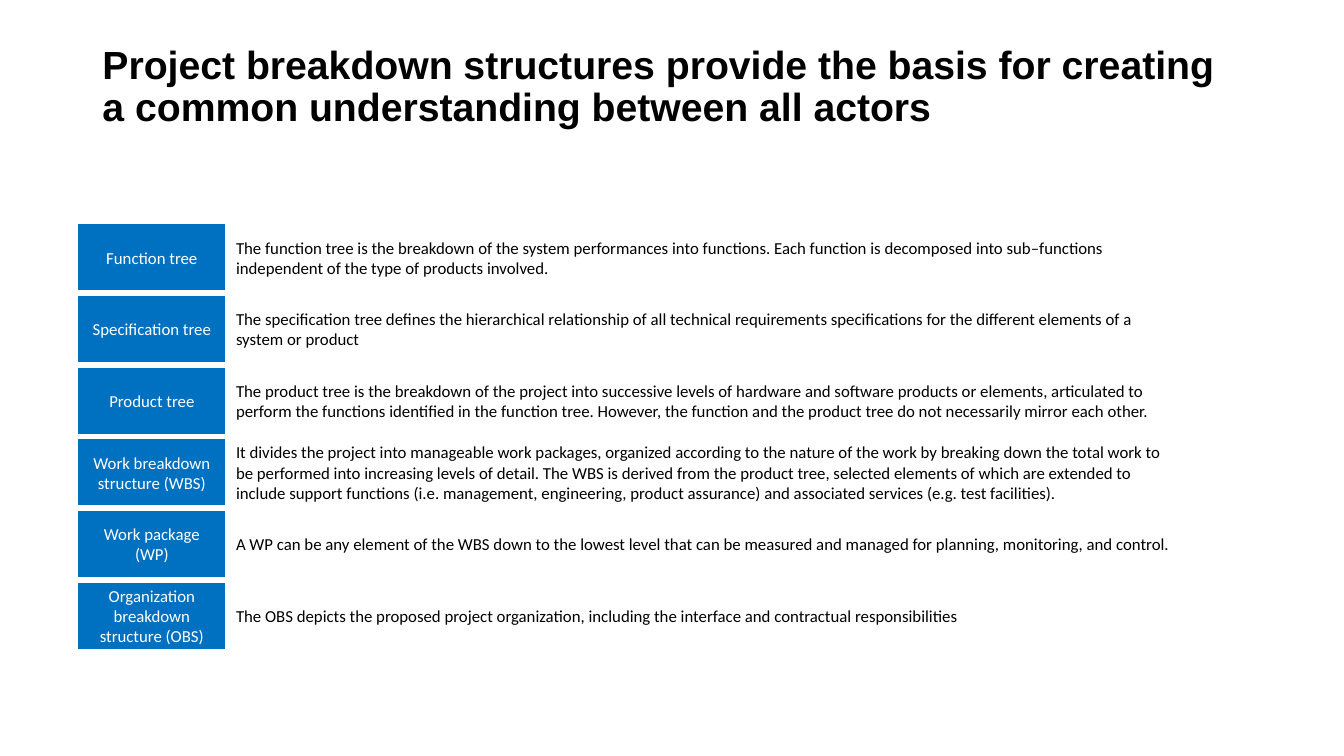
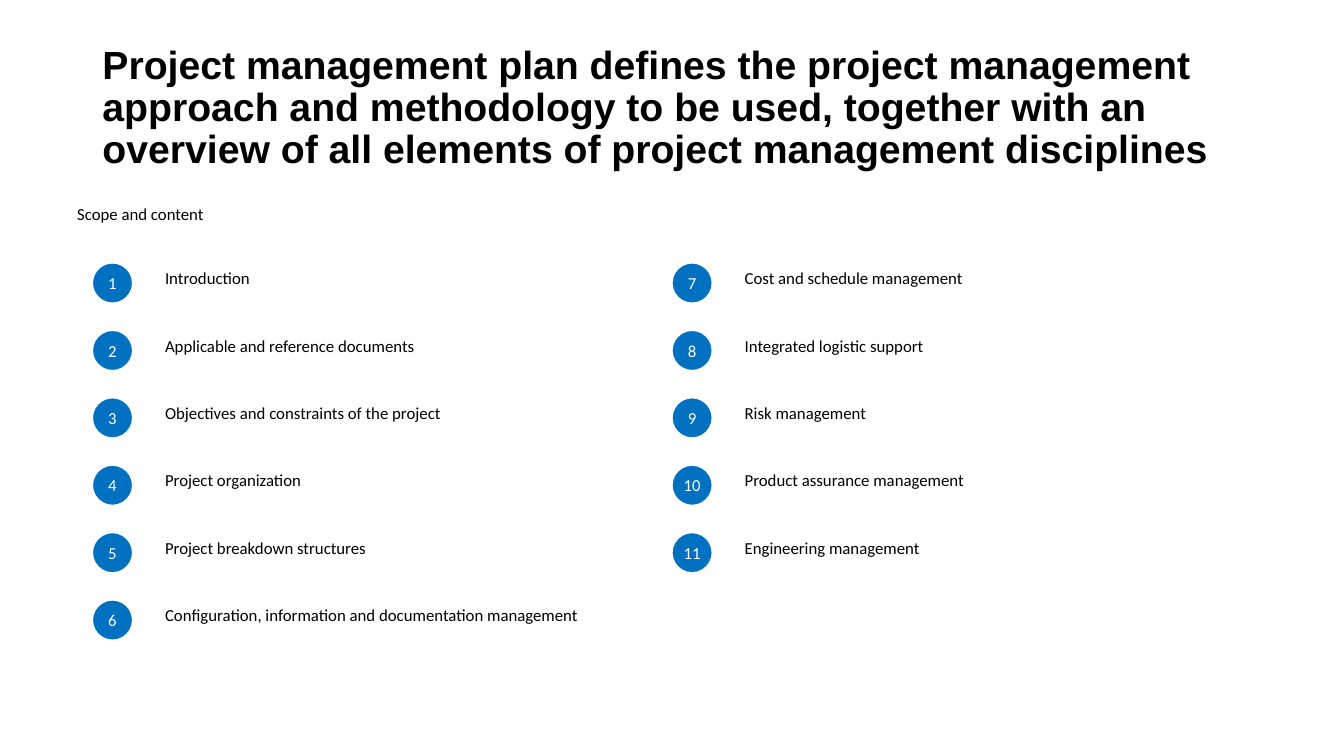
from dataclasses import dataclass

from pptx import Presentation
from pptx.dml.color import RGBColor
from pptx.enum.shapes import MSO_SHAPE
from pptx.enum.text import MSO_ANCHOR, MSO_AUTO_SIZE, PP_ALIGN
from pptx.util import Pt

RECTANGLE, OVAL = MSO_SHAPE.RECTANGLE, MSO_SHAPE.OVAL
TOP, MIDDLE = MSO_ANCHOR.TOP, MSO_ANCHOR.MIDDLE
LEFT, CENTER = PP_ALIGN.LEFT, PP_ALIGN.CENTER
NO_AUTO_SIZE = MSO_AUTO_SIZE.NONE
TITLE_ONLY = 5


@dataclass(frozen=True)
class Theme:
    accent: RGBColor = RGBColor(0x00, 0x70, 0xC0)
    light: RGBColor = RGBColor(0xFF, 0xFF, 0xFF)
    dark: RGBColor = RGBColor(0x00, 0x00, 0x00)
    title_font: str = "Arial"
    body_font: str = "Calibri"
    title_size: Pt = Pt(28)
    body_size: Pt = Pt(12)


class Deck:
    """Holds the theme, the presentation and the slide being filled."""

    def __init__(self, theme):
        self.theme = theme
        self.presentation = Presentation()
        self.presentation.slide_width = Pt(960)
        self.presentation.slide_height = Pt(540)
        self.slide = None

    def set_text(self, shape, text, color, anchor=TOP, alignment=LEFT):
        text_frame = shape.text_frame
        text_frame.text = text
        text_frame.word_wrap = True
        text_frame.auto_size = NO_AUTO_SIZE
        text_frame.vertical_anchor = anchor
        paragraph = text_frame.paragraphs[0]
        paragraph.alignment = alignment
        font = paragraph.runs[0].font
        font.name = self.theme.body_font
        font.size = self.theme.body_size
        font.color.rgb = color
        return paragraph

    def add_slide(self, title):
        layout = self.presentation.slide_layouts[TITLE_ONLY]
        self.slide = self.presentation.slides.add_slide(layout)
        shape = self.slide.shapes.title
        shape.left, shape.top = Pt(66), Pt(28.8)
        shape.width, shape.height = Pt(828), Pt(104.4)
        paragraph = self.set_text(shape, title, self.theme.dark)
        paragraph.line_spacing = 0.9
        font = paragraph.runs[0].font
        font.name = self.theme.title_font
        font.size = self.theme.title_size
        font.bold = True

    def add_text(self, shapes, text, left, top, width, height, anchor=TOP):
        box = shapes.add_textbox(Pt(left), Pt(top), Pt(width), Pt(height))
        self.set_text(box, text, self.theme.dark, anchor)

    def add_label(self, shapes, kind, text, left, top, width, height):
        """Add a filled shape with centred light text."""
        shape = shapes.add_shape(kind, Pt(left), Pt(top), Pt(width), Pt(height))
        shape.shadow.inherit = False
        shape.fill.solid()
        shape.fill.fore_color.rgb = self.theme.accent
        shape.line.color.rgb = self.theme.light
        shape.line.width = Pt(1)
        self.set_text(shape, text, self.theme.light, MIDDLE, CENTER)
        return shape

    def add_definition(self, term, meaning, top):
        left, term_width, height = 55.5, 106, 48.2
        shapes = self.slide.shapes.add_group_shape().shapes
        self.add_text(shapes, meaning, left + term_width, top, 682.5, height, MIDDLE)
        self.add_label(shapes, RECTANGLE, term, left, top, term_width, height)

    def add_numbered_item(self, number, text, left, top):
        diameter = 28.8
        shapes = self.slide.shapes.add_group_shape().shapes
        self.add_text(shapes, text, left + 44.8, top, 350, diameter)
        circle = self.add_label(shapes, OVAL, str(number), left, top, diameter, diameter)
        circle.text_frame.margin_left = circle.text_frame.margin_right = Pt(0)


BREAKDOWN_STRUCTURES = [
    ("Function tree",
     "The function tree is the breakdown of the system performances into functions. "
     "Each function is decomposed into sub–functions independent of the type of "
     "products involved."),
    ("Specification tree",
     "The specification tree defines the hierarchical relationship of all technical "
     "requirements specifications for the different elements of a system or product"),
    ("Product tree",
     "The product tree is the breakdown of the project into successive levels of "
     "hardware and software products or elements, articulated to perform the functions "
     "identified in the function tree. However, the function and the product tree do "
     "not necessarily mirror each other."),
    ("Work breakdown structure (WBS)",
     "It divides the project into manageable work packages, organized according to the "
     "nature of the work by breaking down the total work to be performed into increasing "
     "levels of detail. The WBS is derived from the product tree, selected elements of "
     "which are extended to include support functions (i.e. management, engineering, "
     "product assurance) and associated services (e.g. test facilities)."),
    ("Work package (WP)",
     "A WP can be any element of the WBS down to the lowest level that can be measured "
     "and managed for planning, monitoring, and control."),
    ("Organization breakdown structure (OBS)",
     "The OBS depicts the proposed project organization, including the interface and "
     "contractual responsibilities"),
]

PLAN_CONTENTS = [
    "Introduction",
    "Applicable and reference documents",
    "Objectives and constraints of the project",
    "Project organization",
    "Project breakdown structures",
    "Configuration, information and documentation management",
    "Cost and schedule management",
    "Integrated logistic support",
    "Risk management",
    "Product assurance management",
    "Engineering management",
]


def add_breakdown_slide(deck):
    deck.add_slide("Project breakdown structures provide the basis for creating "
                   "a common understanding between all actors")
    for row, (term, meaning) in enumerate(BREAKDOWN_STRUCTURES):
        deck.add_definition(term, meaning, 159.8 + row * 51.2)


def add_plan_slide(deck):
    deck.add_slide("Project management plan defines the project management approach and "
                   "methodology to be used, together with an overview of all elements of "
                   "project management disciplines")
    deck.add_text(deck.slide.shapes, "Scope and content", 48, 142, 431, 31)
    rows_per_column = 6
    for index, text in enumerate(PLAN_CONTENTS):
        column, row = divmod(index, rows_per_column)
        deck.add_numbered_item(index + 1, text, 66 + column * 414, 187.8 + row * 48.15)


def main():
    deck = Deck(Theme())
    add_breakdown_slide(deck)
    add_plan_slide(deck)
    deck.presentation.save("out.pptx")


if __name__ == "__main__":
    main()
